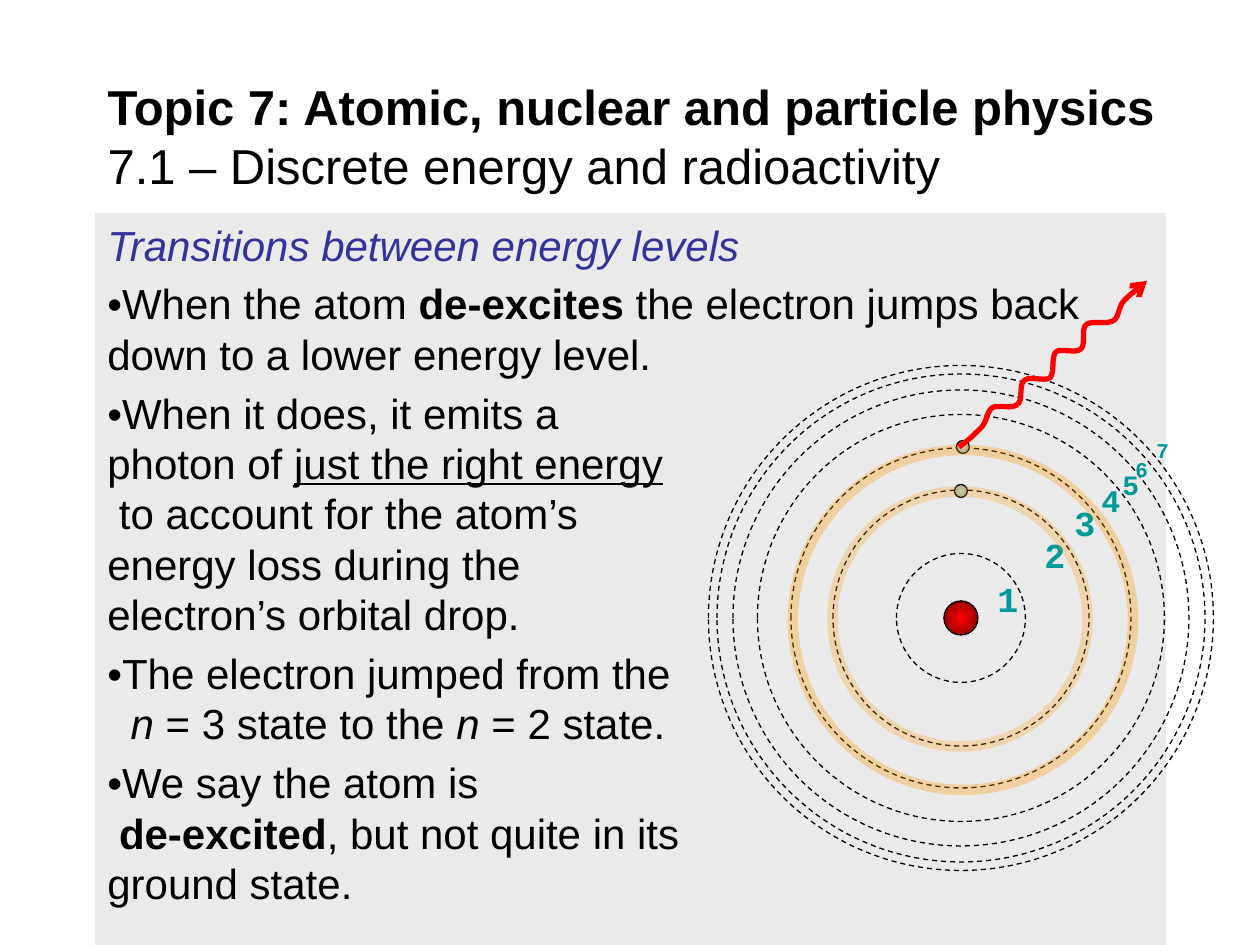
"""Build a slide on electron transitions between atomic energy levels."""
from lxml import etree
from pptx import Presentation
from pptx.dml.color import RGBColor
from pptx.enum.shapes import MSO_SHAPE
from pptx.enum.dml import MSO_LINE
from pptx.enum.text import MSO_ANCHOR, MSO_AUTO_SIZE, PP_ALIGN
from pptx.oxml.ns import qn
from pptx.util import Pt

PX = 914400 // 126
OVAL, RECT, DASH = MSO_SHAPE.OVAL, MSO_SHAPE.RECTANGLE, MSO_LINE.DASH
TOP, MIDDLE, LEFT = MSO_ANCHOR.TOP, MSO_ANCHOR.MIDDLE, PP_ALIGN.LEFT
FIXED = MSO_AUTO_SIZE.NONE

BLACK = RGBColor(0x00, 0x00, 0x00)
PANEL = RGBColor(0xEA, 0xEA, 0xEA)
INDIGO = RGBColor(0x33, 0x33, 0x99)
TEAL = RGBColor(0x00, 0x99, 0x99)
ORANGE = RGBColor(0xFF, 0x99, 0x00)
RED = RGBColor(0xFF, 0x00, 0x00)
DARK_RED = RGBColor(0x76, 0x00, 0x00)
PALE_BLUE = RGBColor(0xBB, 0xE0, 0xE3)
GREY_BLUE = RGBColor(0x86, 0xA0, 0xA2)

TITLE = [[("Topic 7: Atomic, nuclear and particle physics\n", "b"),
          ("7.1 – Discrete energy and radioactivity", "")]]
HEADING = [[("Transitions between energy levels", "i")]]
BULLETS = [
    [("•When the atom ", ""), ("de-excites", "b"),
     (" the electron jumps back down to a lower energy level.", "")],
    [("•When it does, it emits a\nphoton of ", ""), ("just the right energy", "u"),
     ("\n to account for the atom’s\nenergy loss during the\nelectron’s orbital drop.", "")],
    [("•The electron jumped from the\n  ", ""), ("n", "i"), (" = 3 state to the ", ""),
     ("n", "i"), (" = 2 state.", "")],
    [("•We say the atom is\n ", ""), ("de-excited", "b"),
     (", but not quite in its\nground state.", "")],
]

CENTRE = (961, 618)
ORBITS = [129, 256, 340, 407, 456, 488, 505]
LABELS = [(985, 571, 20), (1032, 527, 20), (1062, 495, 20), (1089, 475, 18),
          (1110, 461, 16), (1123, 450, 12), (1144, 431, 12)]
ELECTRONS = [(961, 491), (963, 447)]
HIGHLIGHTS = [(960, 619, 255, 26), (963, 620, 340, 31)]
PHOTON_START = (959, 447)
PHOTON_CURVES = [
    ((968, 441), (976, 433), (982, 427)),
    ((987, 421), (987, 412), (992, 408)),
    ((998, 404), (1013, 410), (1018, 404)),
    ((1023, 401), (1019, 384), (1024, 381)),
    ((1029, 375), (1043, 382), (1050, 378)),
    ((1055, 373), (1051, 357), (1056, 352)),
    ((1061, 348), (1076, 354), (1081, 349)),
    ((1086, 345), (1081, 329), (1086, 325)),
    ((1091, 320), (1106, 325), (1113, 321)),
    ((1119, 318), (1118, 309), (1123, 302)),
    ((1129, 295), (1138, 289), (1147, 281)),
]
CURVE_STEPS = 8


def px(*lengths):
    return [n * PX for n in lengths]


def write(tf, paragraphs, size, font="Arial", color=BLACK, before=0, anchor=TOP):
    tf.word_wrap = True
    tf.auto_size = FIXED
    tf.vertical_anchor = anchor
    for runs in paragraphs:
        p = tf.add_paragraph() if tf.text else tf.paragraphs[0]
        p.alignment = LEFT
        p.space_before = Pt(before)
        for text, style in runs:
            for i, part in enumerate(text.split("\n")):
                if i:
                    p.add_line_break()
                if part:
                    r = p.add_run()
                    r.text = part
                    f = r.font
                    f.name, f.size, f.color.rgb = font, Pt(size), color
                    f.bold, f.italic, f.underline = (c in style for c in "biu")


def circle(s, x, y, d, color=BLACK, width=0.75, dash=None, gradient=None, alpha=None):
    sp = s.shapes.add_shape(OVAL, *px(x - d / 2, y - d / 2, d, d))
    sp.shadow.inherit = False
    sp.line.color.rgb = color
    sp.line.width = Pt(width)
    if dash:
        sp.line.dash_style = dash
    if alpha:
        clr = sp.line._get_or_add_ln().find(".//" + qn("a:srgbClr"))
        etree.SubElement(clr, qn("a:alpha"), val=str(alpha * 1000))
    if gradient:
        sp.fill.gradient()
        for stop, rgb, pos in zip(sp.fill.gradient_stops, gradient, (0, 1)):
            stop.color.rgb = rgb
            stop.position = pos
        grad = sp._element.spPr.find(qn("a:gradFill"))
        grad.remove(grad.find(qn("a:lin")))
        radial = etree.SubElement(grad, qn("a:path"), {"path": "circle"})
        etree.SubElement(radial, qn("a:fillToRect"), l="50000", t="50000", r="50000", b="50000")
    else:
        sp.fill.background()


def photon(s):
    points, start = [], PHOTON_START
    for a, b, end in PHOTON_CURVES:
        for t in (n / CURVE_STEPS for n in range(1, CURVE_STEPS + 1)):
            u = 1 - t
            points.append([u**3 * p0 + 3 * u * u * t * p1 + 3 * u * t * t * p2 + t**3 * p3
                           for p0, p1, p2, p3 in zip(start, a, b, end)])
        start = end
    fb = s.shapes.build_freeform(*px(*PHOTON_START), scale=1.0)
    fb.add_line_segments([px(*pt) for pt in points], close=False)
    sp = fb.convert_to_shape()
    sp.shadow.inherit = False
    sp.fill.background()
    sp.line.color.rgb = RED
    sp.line.width = Pt(3)
    etree.SubElement(sp.line._get_or_add_ln(), qn("a:tailEnd"), type="arrow")


def main():
    prs = Presentation()
    prs.slide_width, prs.slide_height = px(1260, 945)
    s = prs.slides.add_slide(prs.slide_layouts[5])

    title = s.shapes.title
    title.left, title.top, title.width, title.height = px(95, 73, 1101, 124)
    write(title.text_frame, TITLE, 28, anchor=MIDDLE)

    panel = s.shapes.add_shape(RECT, *px(95, 213, 1071, 732))
    panel.shadow.inherit = False
    panel.fill.solid()
    panel.fill.fore_color.rgb = PANEL
    panel.line.fill.background()
    write(panel.text_frame, HEADING, 24, color=INDIGO)
    write(panel.text_frame, BULLETS, 24, before=4.8)

    circle(s, *CENTRE, 34, gradient=(RED, DARK_RED))
    for d in ORBITS:
        circle(s, *CENTRE, d, dash=DASH)
    for n, (x, y, size) in enumerate(LABELS, 1):
        tb = s.shapes.add_textbox(*px(x, y, 59, 2 * size + 14))
        write(tb.text_frame, [[(str(n), "b")]], size, font="Courier New", color=TEAL,
              before=size / 2)
    for x, y in ELECTRONS:
        circle(s, x, y, 13, gradient=(PALE_BLUE, GREY_BLUE))
    for x, y, d, alpha in HIGHLIGHTS:
        circle(s, x, y, d, color=ORANGE, width=6, alpha=alpha)
    photon(s)

    prs.save("out.pptx")


if __name__ == "__main__":
    main()
